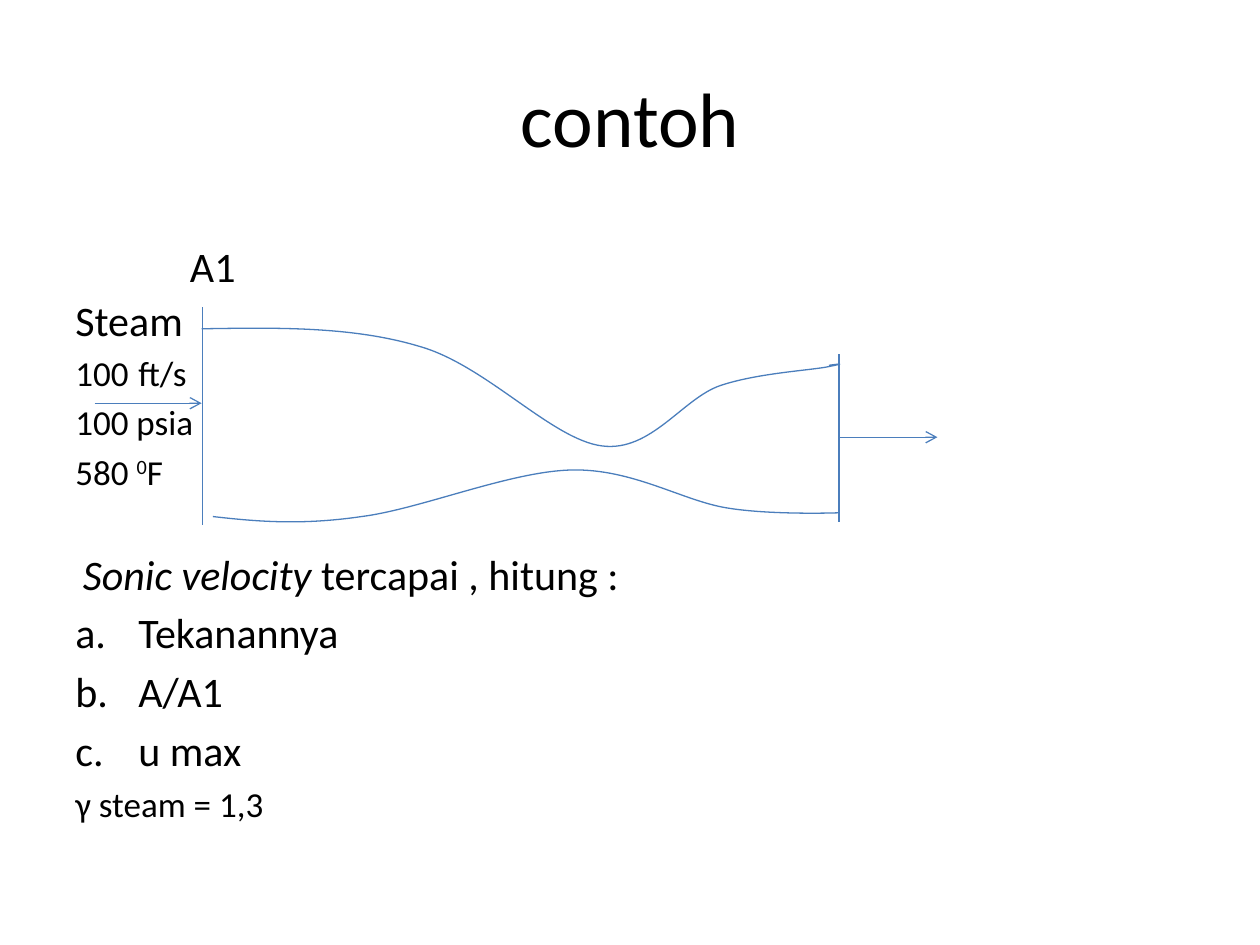
import dataclasses

import lxml.etree
import pptx
import pptx.dml.color
import pptx.enum.shapes
import pptx.enum.text
import pptx.oxml
import pptx.oxml.ns
import pptx.util

Inches = pptx.util.Inches
Pt = pptx.util.Pt
qn = pptx.oxml.ns.qn


@dataclasses.dataclass(frozen=True)
class Theme:
    font: str = "Calibri"
    ink: str = "000000"
    stroke: str = "4B7EBC"
    stroke_width: float = 0.75
    title_size: int = 44
    large: int = 24
    small: int = 20
    large_gap: float = 4.9
    small_gap: float = 4
    list_indent: float = 0.5


class SlideBuilder:
    def __init__(self, page, theme):
        self.page = page
        self.theme = theme

    def color(self, value):
        return pptx.dml.color.RGBColor.from_string(value)

    def format_font(self, font, size):
        font.name = self.theme.font
        font.size = Pt(size)
        font.color.rgb = self.color(self.theme.ink)

    def format_line(self, line):
        line.color.rgb = self.color(self.theme.stroke)
        line.width = Pt(self.theme.stroke_width)

    def title(self, text, left, top, width, height):
        box = self.page.shapes.title
        box.left, box.top = Inches(left), Inches(top)
        box.width, box.height = Inches(width), Inches(height)
        box.text_frame.text = text
        box.text_frame.vertical_anchor = pptx.enum.text.MSO_ANCHOR.MIDDLE
        para = box.text_frame.paragraphs[0]
        para.alignment = pptx.enum.text.PP_ALIGN.CENTER
        self.format_font(para.runs[0].font, self.theme.title_size)

    def text_box(self, left, top, width, height, margin_top):
        box = self.page.shapes.add_textbox(
            Inches(left), Inches(top), Inches(width), Inches(height))
        box.text_frame.word_wrap = True
        box.text_frame.margin_top = Inches(margin_top)
        return box

    def paragraph(self, box, spans, size, gap, indent=0, numbering=None, start=1):
        frame = box.text_frame
        para = frame.paragraphs[0]
        if para.runs:
            para = frame.add_paragraph()
        properties = para._p.get_or_add_pPr()
        if numbering:
            indent = self.theme.list_indent
            properties.set("indent", str(Inches(-indent)))
        properties.set("marL", str(Inches(indent)))
        para.space_before = Pt(gap)
        if numbering:
            bullet = lxml.etree.SubElement(properties, qn("a:buAutoNum"))
            bullet.set("type", numbering)
            if start > 1:
                bullet.set("startAt", str(start))
        self.format_font(para.font, size)
        for text, style in spans:
            span = para.add_run()
            span.text = text
            self.format_font(span.font, size)
            if style == "italic":
                span.font.italic = True
            elif style == "superscript":
                span.font._element.set("baseline", "30000")

    def line(self, start, end, arrow=False):
        connector = self.page.shapes.add_connector(
            pptx.enum.shapes.MSO_CONNECTOR.STRAIGHT,
            *(Inches(value) for value in (*start, *end)))
        self.format_line(connector.line)
        if arrow:
            outline = connector.line._get_or_add_ln()
            lxml.etree.SubElement(outline, qn("a:tailEnd")).set("type", "arrow")
        lxml.etree.SubElement(connector._element.spPr, qn("a:effectLst"))

    def curve(self, start, segments, width, height):
        builder = self.page.shapes.build_freeform(Inches(start[0]), Inches(start[1]))
        ends = [(Inches(x), Inches(y)) for _, _, (x, y) in segments]
        builder.add_line_segments(ends, close=False)
        shape = builder.convert_to_shape()
        shape.width, shape.height = Inches(width), Inches(height)
        outline = shape._element.spPr.find(".//" + qn("a:path"))
        outline.set("w", str(shape.width))
        outline.set("h", str(shape.height))
        for straight, segment in zip(outline.findall(qn("a:lnTo")), segments):
            bezier = lxml.etree.Element(qn("a:cubicBezTo"))
            for x, y in segment:
                point = lxml.etree.SubElement(bezier, qn("a:pt"))
                point.set("x", str(Inches(x) - shape.left))
                point.set("y", str(Inches(y) - shape.top))
            outline.replace(straight, bezier)
        shape.fill.background()
        self.format_line(shape.line)
        shape.shadow.inherit = False


def main():
    deck = pptx.Presentation()
    deck.slide_width, deck.slide_height = Inches(10), Inches(7.5)
    theme = Theme()
    slide = SlideBuilder(deck.slides.add_slide(deck.slide_layouts[5]), theme)
    slide.title("contoh", 0.5, 0.3, 9, 1.25)

    large, small = theme.large, theme.small
    body = slide.text_box(0.5, 1.75, 9, 4.95, margin_top=0.16)
    slide.paragraph(body, [("A1", None)], large, 0, indent=0.91)
    slide.paragraph(body, [("Steam", None)], large, 2)
    slide.paragraph(body, [("ft/s", None)], small, theme.small_gap,
                    numbering="arabicPlain", start=100)
    slide.paragraph(body, [("100 psia", None)], small, theme.small_gap)
    slide.paragraph(body, [("580 ", None), ("0", "superscript"), ("F", None)],
                    small, theme.small_gap)
    slide.paragraph(body, [("Sonic velocity ", "italic"), ("tercapai , hitung :", None)],
                    large, 32, indent=0.06)
    for question in ("Tekanannya", "A/A1", "u max"):
        slide.paragraph(body, [(question, None)], large, theme.large_gap,
                        numbering="alphaLcPeriod")
    slide.paragraph(body, [("γ steam = 1,3", None)], small, theme.small_gap)

    upper_wall = [
        ((2.2, 2.6), (2.8, 2.59), (3.33, 2.75)),
        ((3.86, 2.9), (4.38, 3.49), (4.78, 3.54)),
        ((5.17, 3.59), (5.42, 3.16), (5.72, 3.06)),
        ((6.02, 2.96), (6.44, 2.94), (6.58, 2.91)),
        ((6.73, 2.88), (6.65, 2.89), (6.58, 2.9)),
    ]
    lower_wall = [
        ((2.04, 4.14), (2.39, 4.17), (2.87, 4.1)),
        ((3.34, 4.04), (4.05, 3.74), (4.54, 3.73)),
        ((5.02, 3.72), (5.41, 3.97), (5.76, 4.03)),
        ((6.11, 4.09), (6.66, 4.07), (6.66, 4.07)),
    ]
    slide.curve((1.6, 2.61), upper_wall, 5.07, 0.93)
    slide.curve((1.69, 4.1), lower_wall, 4.97, 0.41)

    inlet, outlet = 1.61, 6.66
    slide.line((inlet, 2.44), (inlet, 4.17))
    slide.line((outlet, 2.81), (outlet, 4.14))
    slide.line((0.75, 3.2), (1.6, 3.2), arrow=True)
    slide.line((outlet, 3.47), (7.44, 3.47), arrow=True)

    deck.save("out.pptx")


if __name__ == "__main__":
    main()
